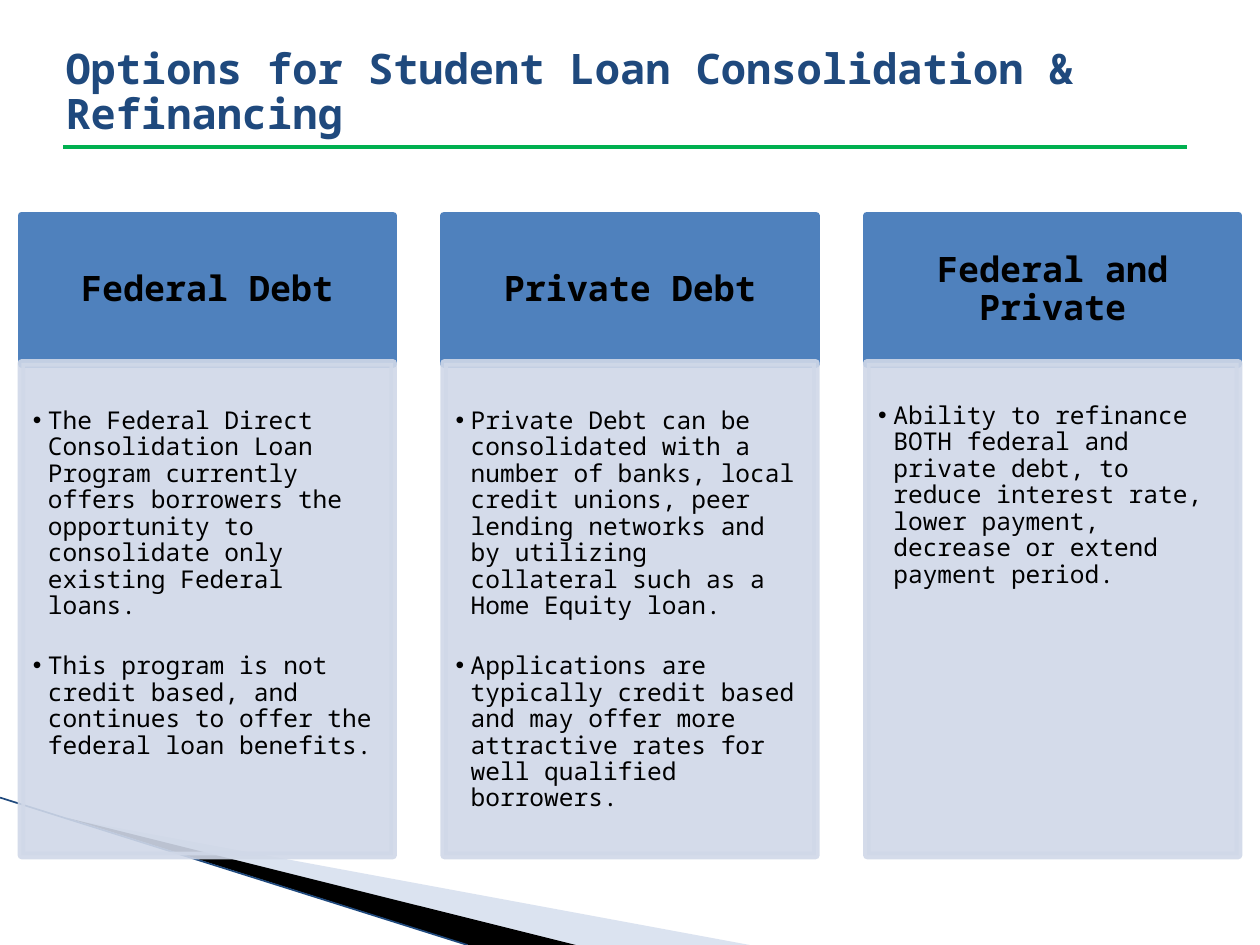
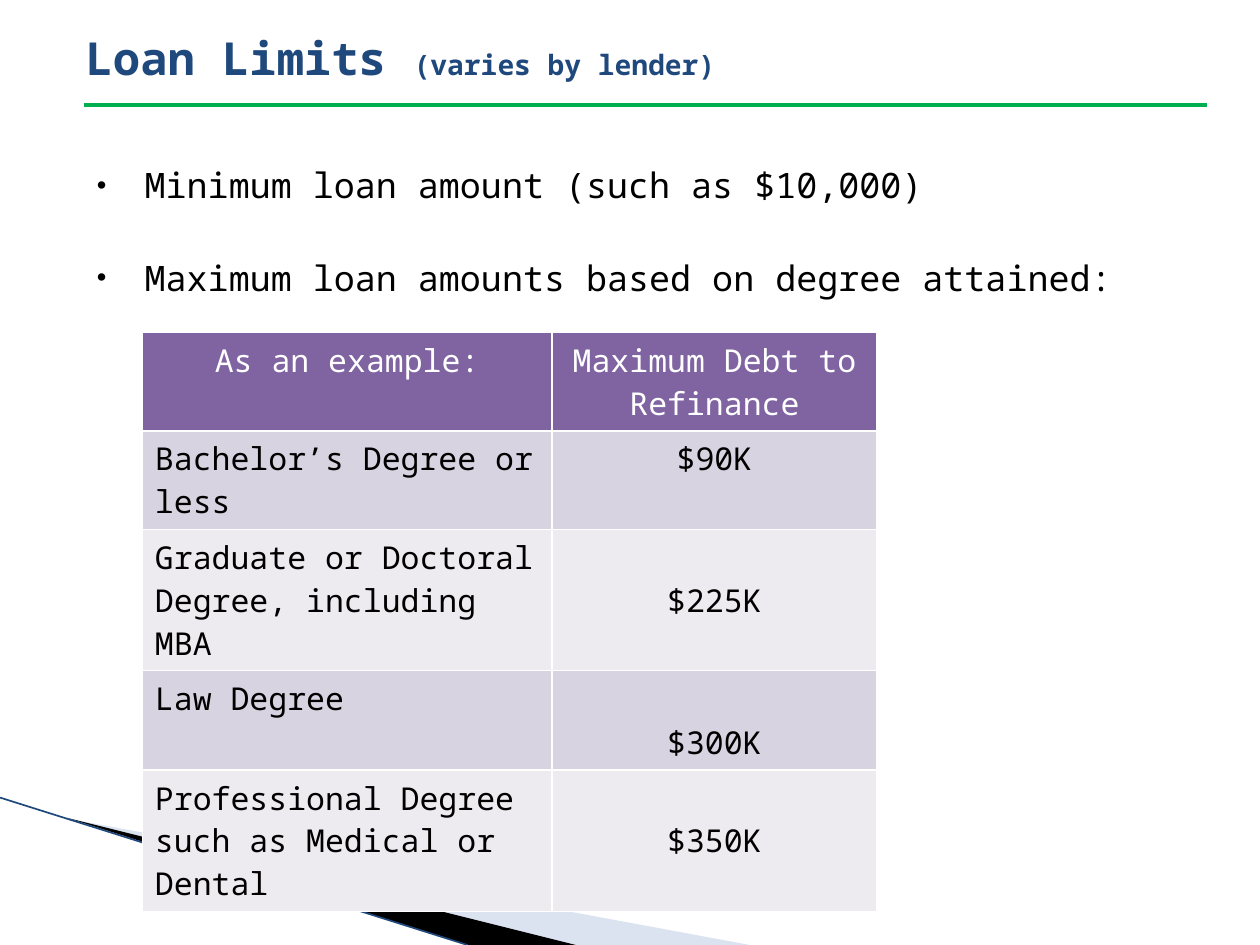
from dataclasses import dataclass

from lxml import etree
from pptx import Presentation
from pptx.dml.color import RGBColor
from pptx.enum.shapes import MSO_CONNECTOR, MSO_SHAPE
from pptx.enum.text import MSO_ANCHOR, MSO_AUTO_SIZE, PP_ALIGN
from pptx.oxml.ns import qn
from pptx.util import Inches, Pt

RECTANGLE = MSO_SHAPE.RECTANGLE
STRAIGHT = MSO_CONNECTOR.STRAIGHT
TOP, MIDDLE, BOTTOM = MSO_ANCHOR.TOP, MSO_ANCHOR.MIDDLE, MSO_ANCHOR.BOTTOM
LEFT, CENTER = PP_ALIGN.LEFT, PP_ALIGN.CENTER
NO_AUTOFIT = MSO_AUTO_SIZE.NONE

GRID_COLUMNS, GRID_ROWS = 100, 75


@dataclass(frozen=True)
class Theme:
    font: str = "Noto Sans Mono"
    bullet_font: str = "Arial"
    navy: str = "1F497D"
    green: str = "00B050"
    black: str = "000000"
    white: str = "FFFFFF"
    mist: str = "A7B9DB"
    header_blue: str = "4F81BD"
    panel_blue: str = "D0D8E8"
    purple: str = "8064A2"
    bands: tuple = ("D8D3E0", "EDEAF0")
    title: int = 24
    large_title: int = 26
    title_note: int = 16
    heading: int = 20
    body: int = 20
    panel: int = 14
    table: int = 18


class Deck:
    """Draws on the current slide, in columns and rows of the grid."""

    def __init__(self, theme):
        self.theme = theme
        self.presentation = Presentation()
        self.presentation.slide_width = Inches(10)
        self.presentation.slide_height = Inches(7.5)
        self.column = self.presentation.slide_width / GRID_COLUMNS
        self.row = self.presentation.slide_height / GRID_ROWS
        self.slide = None

    def point(self, x, y):
        return round(x * self.column), round(y * self.row)

    def box(self, left, top, width, height):
        return *self.point(left, top), *self.point(width, height)

    def new_slide(self):
        layout = self.presentation.slide_layouts[5]
        self.slide = self.presentation.slides.add_slide(layout)
        self.wedge([(5.5, 65), (59.5, 75), (45.6, 75)], self.theme.mist, 40)
        self.wedge([(5.3, 64.9), (45.7, 75), (37.2, 75)], self.theme.black)
        self.line((0, 63.3), (37.1, 75), self.theme.navy, 0.95)

    def paint(self, shape, fill, opacity=100, outline=None):
        shape.shadow.inherit = False
        shape.fill.solid()
        shape.fill.fore_color.rgb = RGBColor.from_string(fill)
        if outline:
            shape.line.color.rgb = RGBColor.from_string(fill)
            shape.line.width = Pt(outline)
        else:
            shape.line.fill.background()
        if opacity < 100:
            for color in shape._element.spPr.iter(qn("a:srgbClr")):
                etree.SubElement(color, qn("a:alpha"), val=str(opacity * 1000))

    def wedge(self, corners, fill, opacity=100):
        first, *others = [self.point(*corner) for corner in corners]
        outline = self.slide.shapes.build_freeform(*first)
        outline.add_line_segments(others, close=True)
        self.paint(outline.convert_to_shape(), fill, opacity)

    def line(self, start, end, color, width):
        connector = self.slide.shapes.add_connector(
            STRAIGHT, *self.point(*start), *self.point(*end))
        connector.line.color.rgb = RGBColor.from_string(color)
        connector.line.width = Pt(width)
        etree.SubElement(connector._element.spPr, qn("a:effectLst"))

    def add_text(self, paragraph, text, size, color, bold=False):
        run = paragraph.add_run()
        run.text = text
        run.font.name = self.theme.font
        run.font.size = Pt(size)
        run.font.bold = bold
        run.font.color.rgb = RGBColor.from_string(color)

    def frame(self, shape, anchor, insets=(1, 0.5, 1, 0.5)):
        """Set up a text frame; insets run left, top, right, bottom."""
        frame = shape.text_frame
        frame.word_wrap = True
        frame.auto_size = NO_AUTOFIT
        frame.vertical_anchor = anchor
        frame.margin_left, frame.margin_top = self.point(*insets[:2])
        frame.margin_right, frame.margin_bottom = self.point(*insets[2:])
        return frame

    def title(self, parts, place, spacing=1.0):
        heading = self.slide.shapes.title
        heading.left, heading.top, heading.width, heading.height = self.box(*place)
        paragraph = self.frame(heading, MIDDLE).paragraphs[0]
        paragraph.alignment = LEFT
        paragraph.line_spacing = spacing
        for text, size in parts:
            self.add_text(paragraph, text, size, self.theme.navy, bold=True)

    def title_rule(self, left, right, y):
        self.line((left, y), (right, y), self.theme.green, 2.25)

    def bullets(self, frame, items, size, indent, gap, spacing=1.0, bullet_size=100):
        for index, item in enumerate(items):
            paragraph = frame.add_paragraph() if index else frame.paragraphs[0]
            properties = paragraph._p.get_or_add_pPr()
            hanging = round(indent * self.column)
            properties.set("marL", str(hanging))
            properties.set("indent", str(-hanging))
            etree.SubElement(properties, qn("a:buSzPct"), val=str(bullet_size * 1000))
            etree.SubElement(properties, qn("a:buFont"), typeface=self.theme.bullet_font)
            etree.SubElement(properties, qn("a:buChar"), char="•")
            paragraph.alignment = LEFT
            paragraph.line_spacing = spacing
            if index:
                paragraph.space_before = Pt(gap)
            self.add_text(paragraph, item, size, self.theme.black)

    def bullet_box(self, items, place, **style):
        box = self.slide.shapes.add_textbox(*self.box(*place))
        self.bullets(self.frame(box, TOP), items, **style)

    def block(self, place, fill, opacity=100):
        shape = self.slide.shapes.add_shape(RECTANGLE, *self.box(*place))
        self.paint(shape, fill, opacity, outline=4.33)
        return shape

    def option_column(self, left, width, heading, items, text_top):
        theme = self.theme
        header = self.block((left, 17.1, width, 11.8), theme.header_blue)
        paragraph = self.frame(header, MIDDLE, (1.6, 0.9, 1.6, 0.9)).paragraphs[0]
        paragraph.alignment = CENTER
        paragraph.line_spacing = 0.9
        self.add_text(paragraph, heading, theme.heading, theme.black, bold=True)

        panel = self.block((left, 28.8, width, 39.1), theme.panel_blue, 90)
        self.bullets(self.frame(panel, TOP, (0.9, text_top, 1.2, 1.4)), items,
                     size=theme.panel, indent=1.2, gap=19, spacing=0.9)

    def cell_borders(self, cell):
        properties = cell._tc.get_or_add_tcPr()
        for index, side in enumerate(("a:lnL", "a:lnR", "a:lnT", "a:lnB")):
            border = etree.Element(qn(side), w=str(Pt(1)))
            fill = etree.SubElement(border, qn("a:solidFill"))
            etree.SubElement(fill, qn("a:srgbClr"), val=self.theme.white)
            properties.insert(index, border)

    def table(self, rows, left, top, widths, heights, value_anchors):
        """Draw a header row and banded rows; the last column is centred."""
        theme = self.theme
        table = self.slide.shapes.add_table(
            len(rows), len(widths),
            *self.box(left, top, sum(widths), sum(heights))).table
        for column, width in zip(table.columns, widths):
            column.width = round(width * self.column)
        for row, height in zip(table.rows, heights):
            row.height = round(height * self.row)
        for r, texts in enumerate(rows):
            fill = theme.bands[(r - 1) % 2] if r else theme.purple
            for c, text in enumerate(texts):
                cell = table.cell(r, c)
                cell.fill.solid()
                cell.fill.fore_color.rgb = RGBColor.from_string(fill)
                cell.vertical_anchor = value_anchors[r] if c else TOP
                self.cell_borders(cell)
                paragraph = cell.text_frame.paragraphs[0]
                paragraph.alignment = CENTER if c or not r else LEFT
                self.add_text(paragraph, text, theme.table,
                              theme.black if r else theme.white)


OPTIONS = [
    ("Federal Debt",
     ["The Federal Direct Consolidation Loan Program currently offers borrowers "
      "the opportunity to consolidate only existing Federal loans.",
      "This program is not credit based, and continues to offer the federal "
      "loan benefits."], 3.6),
    ("Private Debt",
     ["Private Debt can be consolidated with a number of banks, local credit "
      "unions, peer lending networks and by utilizing collateral such as a "
      "Home Equity loan.",
      "Applications are typically credit based and may offer more attractive "
      "rates for well qualified borrowers."], 3.6),
    ("Federal and Private",
     ["Ability to refinance BOTH federal and private debt, to reduce interest "
      "rate, lower payment, decrease or extend payment period."], 3.2),
]

LOAN_LIMITS = [
    ("As an example:", "Maximum Debt to Refinance"),
    ("Bachelor’s Degree or less", "$90K"),
    ("Graduate or Doctoral Degree, including MBA", "$225K"),
    ("Law Degree", "$300K"),
    ("Professional Degree such as Medical or Dental", "$350K"),
]


def consolidation_options(deck):
    deck.new_slide()
    deck.title([("Options for Student Loan Consolidation & Refinancing",
                 deck.theme.title)], (4.2, 3.3, 90, 8.3), spacing=0.88)
    margin, width = 1.7, 29.5
    pitch = (GRID_COLUMNS - 2 * margin - width) / (len(OPTIONS) - 1)
    for index, (heading, items, text_top) in enumerate(OPTIONS):
        deck.option_column(margin + index * pitch, width, heading, items, text_top)
    deck.title_rule(5, 94.2, 11.7)


def loan_limits(deck):
    deck.new_slide()
    deck.title([("Loan Limits ", deck.theme.large_title),
                ("(varies by lender)", deck.theme.title_note)],
               (5.8, 0, 91.6, 9.1))
    deck.bullet_box(["Minimum loan amount (such as $10,000)",
                     "Maximum loan amounts based on degree attained:"],
                    (6.7, 12.5, 85.8, 58.3), size=deck.theme.body,
                    indent=3.8, gap=29, bullet_size=78)
    deck.table(LOAN_LIMITS, 11.3, 26.4, widths=(32.5, 25.8),
               heights=(7.8, 7.8, 11.2, 7.9, 11.2),
               value_anchors=(TOP, TOP, MIDDLE, BOTTOM, MIDDLE))
    deck.title_rule(6.7, 95.8, 8.3)


def main():
    deck = Deck(Theme())
    consolidation_options(deck)
    loan_limits(deck)
    deck.presentation.save("out.pptx")


if __name__ == "__main__":
    main()
